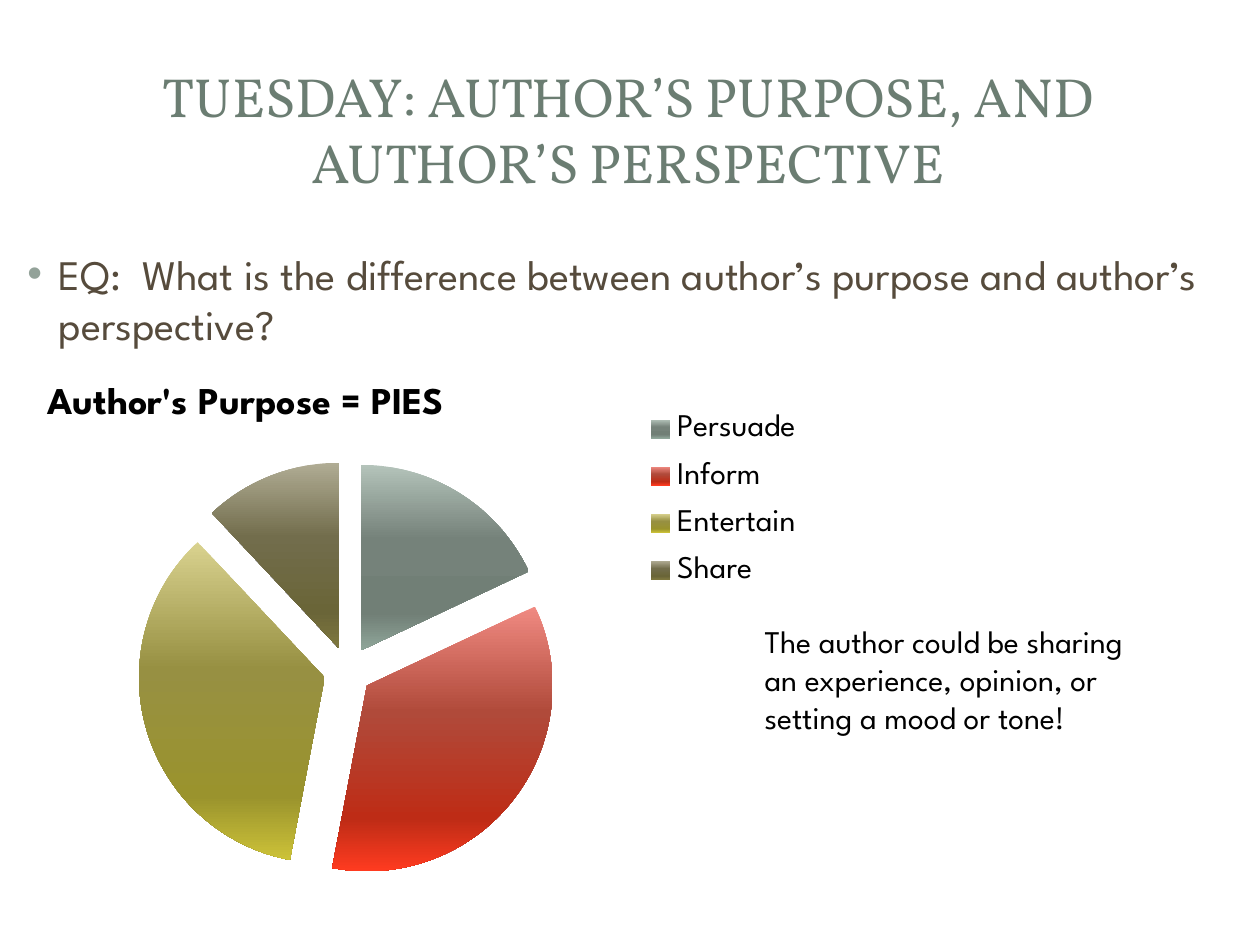
from lxml import etree
from pptx import Presentation
from pptx import util as u
from pptx.chart import data as chart_data
from pptx.dml import color
from pptx.enum import chart as ec, shapes as es, text as et
from pptx.oxml import parse_xml
from pptx.oxml import ns

COLORS = {"title": "6B7D72", "body": "564B3C", "bullet": "93A299",
          "black": "000000", "panel": "FFFFFF"}
SANS, SERIF = "League Spartan", "Vollkorn"

# Category: value, and its gradient from top to bottom
PURPOSES = {
    "Persuade": (18, ["B4C3BA", "75827A", "717F76", "8FA69A"]),
    "Inform": (35, ["F08A82", "B04A3A", "BE2C16", "FF3B20"]),
    "Entertain": (35, ["D9D28F", "979042", "9A932D", "CCC238"]),
    "Share": (12, ["B0AC94", "726D4C", "6A6538", "7F783F"]),
}
STOPS = [0, 40, 80, 100]

prs = Presentation()
prs.slide_width, prs.slide_height = u.Inches(10), u.Inches(7.5)
slide = prs.slides.add_slide(prs.slide_layouts[6])


def style_font(font, name, size, hex_color, bold=False):
    values = {"name": name, "size": u.Pt(size), "bold": bold}
    for key, value in values.items():
        setattr(font, key, value)
    font.color.rgb = color.RGBColor.from_string(hex_color)


def set_layout(element, **fractions):
    """Place a chart part by fractions of the chart area."""
    for old in element.findall(ns.qn("c:layout")):
        element.remove(old)
    layout = parse_xml(f"<c:layout {ns.nsdecls('c')}><c:manualLayout/></c:layout>")
    for tag, value in fractions.items():
        etree.SubElement(layout[0], ns.qn(f"c:{tag}")).set("val", str(value))
    before = [el for el in element if el.tag in
              (ns.qn("c:tx"), ns.qn("c:legendPos"), ns.qn("c:legendEntry"))]
    element.insert(len(before), layout)


# Page panel and the two title panels
panels = [
    (es.MSO_SHAPE.ROUNDED_RECTANGLE, (0.1, 0.11, 9.8, 7.29), 100),
    (es.MSO_SHAPE.RECTANGLE, (0.3, 0.3, 9.4, 1.45), 83),
    (es.MSO_SHAPE.RECTANGLE, (0.41, 0.41, 9.17, 1.22), 100),
]
for kind, box, opacity in panels:
    panel = slide.shapes.add_shape(kind, *map(u.Inches, box))
    panel.shadow.inherit = False
    panel.line.fill.background()
    panel.fill.solid()
    panel.fill.fore_color.rgb = color.RGBColor.from_string(COLORS["panel"])
    if kind == es.MSO_SHAPE.ROUNDED_RECTANGLE:
        panel.adjustments[0] = 0.02
    if opacity < 100:
        shade = panel._element.spPr.find(ns.qn("a:solidFill"))[0]
        etree.SubElement(shade, ns.qn("a:alpha")).set("val", str(opacity * 1000))

# Title, question and remark
texts = [
    {"box": (0.47, 0.45, 9.03, 1.14), "font": (SERIF, 31.5, COLORS["title"]),
     "lines": ["TUESDAY: AUTHOR’S PURPOSE, AND AUTHOR’S PERSPECTIVE"],
     "frame": {"word_wrap": True, "vertical_anchor": et.MSO_ANCHOR.MIDDLE},
     "paragraph": {"alignment": et.PP_ALIGN.CENTER}},
    {"box": (0, 1.92, 9.6, 5.28), "font": (SANS, 24, COLORS["body"]),
     "lines": ["EQ:  What is the difference between author’s purpose and author’s perspective?"],
     "frame": {"word_wrap": True}, "paragraph": {"space_before": u.Pt(4.8)},
     "bullet": "•"},
    {"box": (5.97, 4.89, 3.63, 1.01), "font": (SANS, 18, COLORS["black"]),
     "lines": ["The author could be sharing", "an experience, opinion, or",
               "setting a mood or tone!"],
     "frame": {"word_wrap": False, "auto_size": et.MSO_AUTO_SIZE.SHAPE_TO_FIT_TEXT},
     "paragraph": {}},
]
for item in texts:
    frame = slide.shapes.add_textbox(*map(u.Inches, item["box"])).text_frame
    frame.text = "\n".join(item["lines"])
    for key, value in item["frame"].items():
        setattr(frame, key, value)
    for paragraph in frame.paragraphs:
        for key, value in item["paragraph"].items():
            setattr(paragraph, key, value)
        style_font(paragraph.runs[0].font, *item["font"])
        if "bullet" in item:
            props = paragraph._p.get_or_add_pPr()
            props.set("marL", str(u.Inches(0.37)))
            props.set("indent", str(u.Inches(-0.25)))
            bullet_color = etree.SubElement(props, ns.qn("a:buClr"))
            etree.SubElement(bullet_color, ns.qn("a:srgbClr")).set("val", COLORS["bullet"])
            etree.SubElement(props, ns.qn("a:buFont")).set("typeface", "Arial")
            etree.SubElement(props, ns.qn("a:buChar")).set("char", item["bullet"])

# Pie of purposes
pies = chart_data.CategoryChartData()
pies.categories = list(PURPOSES)
pies.add_series("Author's Purpose = PIES", [value for value, _ in PURPOSES.values()])
pie = slide.shapes.add_chart(ec.XL_CHART_TYPE.PIE, *map(u.Inches, (0.32, 2.55, 6.67, 4.44)),
                             pies).chart
style_font(pie.font, SANS, 18, COLORS["black"])

pie.has_title = True
heading = pie.chart_title.text_frame
heading.text = "Author's Purpose = PIES"
style_font(heading.paragraphs[0].runs[0].font, SANS, 21.6, COLORS["black"], bold=True)
pie.chart_title.include_in_layout = False
set_layout(pie.chart_title._element, xMode="edge", yMode="edge", x=0, y=0.1)

pie.has_legend = True
pie.legend.position = ec.XL_LEGEND_POSITION.RIGHT
pie.legend.include_in_layout = False
set_layout(pie.legend._element, xMode="edge", yMode="edge", x=0.678, y=0.134, w=0.27, h=0.37)
set_layout(pie._chartSpace.chart.plotArea, layoutTarget="inner", xMode="edge",
           yMode="edge", x=0.116, y=0.25, w=0.5, h=0.75)

# Slices: pulled apart, shaded from top to bottom
pie.plots[0].vary_by_categories = True
slices = pie.plots[0].series[0]
for index, (_, shades) in enumerate(PURPOSES.values()):
    properties = slices.points[index].format
    properties.line.fill.background()
    stops = "".join(f'<a:gs pos="{pos * 1000}"><a:srgbClr val="{shade}"/></a:gs>'
                    for pos, shade in zip(STOPS, shades))
    gradient = parse_xml(f"<a:gradFill {ns.nsdecls('a')}><a:gsLst>{stops}</a:gsLst>"
                         '<a:lin ang="5400000" scaled="0"/></a:gradFill>')
    point = slices._element.findall(ns.qn("c:dPt"))[index]
    point.find(ns.qn("c:spPr")).insert(0, gradient)
explosion = etree.Element(ns.qn("c:explosion"), val="13")
slices._element.find(ns.qn("c:dPt")).addprevious(explosion)

prs.save("out.pptx")
